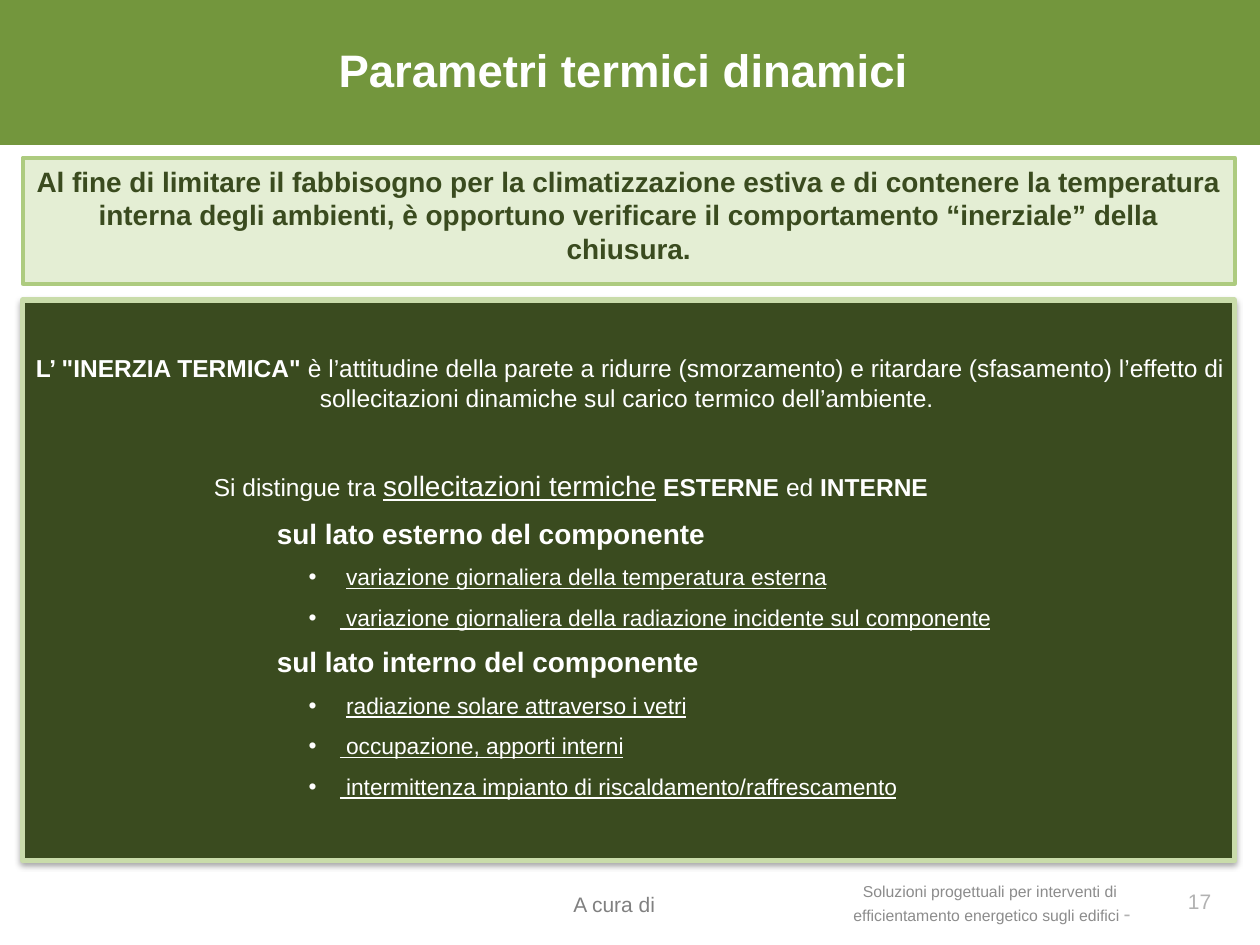
"""Build the slide on dynamic thermal parameters."""
import copy
from dataclasses import dataclass
from typing import Optional

import lxml.etree
import pptx
import pptx.dml.color
import pptx.enum.shapes
import pptx.enum.text
import pptx.oxml
import pptx.oxml.ns
import pptx.util

Cm = pptx.util.Cm
Pt = pptx.util.Pt
RGBColor = pptx.dml.color.RGBColor
Align = pptx.enum.text.PP_ALIGN
Anchor = pptx.enum.text.MSO_ANCHOR
qn = pptx.oxml.ns.qn

FONT = "Arial"
WHITE = RGBColor(0xFF, 0xFF, 0xFF)
BAND_GREEN = RGBColor(0x73, 0x96, 0x3D)
DARK_GREEN = RGBColor(0x3A, 0x4B, 0x1F)
PALE_GREEN = RGBColor(0xE4, 0xEE, 0xD4)
EDGE_GREEN = RGBColor(0xAD, 0xCB, 0x7F)
SOFT_GREEN = RGBColor(0xC9, 0xDC, 0xAA)
AUTHOR_GRAY = RGBColor(0x80, 0x80, 0x80)
COURSE_GRAY = RGBColor(0x8C, 0x8C, 0x8C)
NUMBER_GRAY = RGBColor(0xB2, 0xB2, 0xB2)

SHADOW = (
    '<a:effectLst xmlns:a="http://schemas.openxmlformats.org/drawingml/2006/main">'
    f'<a:outerShdw blurRad="{Pt(3.1)}" dist="{Pt(1.8)}" dir="5400000" rotWithShape="0">'
    '<a:srgbClr val="000000"><a:alpha val="35000"/></a:srgbClr>'
    "</a:outerShdw></a:effectLst>"
)


@dataclass
class Box:
    left: float
    top: float
    width: float
    height: float

    def lengths(self) -> tuple:
        return Cm(self.left), Cm(self.top), Cm(self.width), Cm(self.height)


@dataclass
class Span:
    text: str
    size: float
    color: RGBColor = WHITE
    bold: bool = False
    underline: bool = False


@dataclass
class Item:
    spans: list
    level: int = 0
    space_before: float = 0


def heading(text: str) -> Item:
    return Item([Span(text, 16, bold=True)], 1, 8)


def load(text: str) -> Item:
    return Item([Span(" ", 13), Span(text, 13, underline=True)], 2, 7.5)


def underlined_load(text: str) -> Item:
    return Item([Span(" " + text, 13, underline=True)], 2, 7.5)


STRESSES = [
    Item([
        Span("Si distingue tra ", 14),
        Span("sollecitazioni termiche", 16, underline=True),
        Span(" ", 14),
        Span("ESTERNE", 14, bold=True),
        Span(" ed ", 14),
        Span("INTERNE", 14, bold=True),
    ]),
    heading("sul lato esterno del componente"),
    load("variazione giornaliera della temperatura esterna"),
    underlined_load("variazione giornaliera della radiazione incidente sul componente"),
    heading("sul lato interno del componente"),
    load("radiazione solare attraverso i vetri"),
    underlined_load("occupazione, apporti interni"),
    underlined_load("intermittenza impianto di riscaldamento/raffrescamento"),
]


def write_spans(paragraph, spans: list, align) -> None:
    paragraph.alignment = align
    paragraph.space_before = Pt(0)
    for span in spans:
        run = paragraph.add_run()
        run.text = span.text
        run.font.name = FONT
        run.font.size = Pt(span.size)
        run.font.color.rgb = span.color
        run.font.bold = span.bold
        run.font.underline = span.underline


def set_frame(frame, anchor, insets: tuple = (0.25, 0.13, 0.25, 0.13)) -> None:
    frame.word_wrap = True
    frame.auto_size = pptx.enum.text.MSO_AUTO_SIZE.NONE
    frame.vertical_anchor = anchor
    (frame.margin_left, frame.margin_top,
     frame.margin_right, frame.margin_bottom) = map(Cm, insets)


def add_panel(slide, box: Box, fill: RGBColor, edge: Optional[RGBColor] = None,
              edge_width: float = 0):
    panel = slide.shapes.add_shape(
        pptx.enum.shapes.MSO_SHAPE.RECTANGLE, *box.lengths())
    panel.shadow.inherit = False
    panel.fill.solid()
    panel.fill.fore_color.rgb = fill
    if edge is None:
        panel.line.fill.background()
    else:
        panel.line.color.rgb = edge
        panel.line.width = Pt(edge_width)
    return panel


def add_text(slide, box: Box, spans: list, align, anchor=Anchor.MIDDLE, **frame_options):
    frame = slide.shapes.add_textbox(*box.lengths()).text_frame
    set_frame(frame, anchor, **frame_options)
    write_spans(frame.paragraphs[0], spans, align)
    return frame


def place(placeholder, box: Box) -> None:
    (placeholder.left, placeholder.top,
     placeholder.width, placeholder.height) = box.lengths()
    placeholder.element.getparent().append(placeholder.element)


def write_item(paragraph, item: Item) -> None:
    paragraph.level = item.level
    bulleted = item.level == 2
    properties = paragraph._p.get_or_add_pPr()
    properties.set("marL", str(Cm(1.27 * item.level)))
    properties.set("indent", str(Cm(-0.63) if bulleted else 0))
    if bulleted:
        lxml.etree.SubElement(properties, qn("a:buFont")).set("typeface", FONT)
        lxml.etree.SubElement(properties, qn("a:buChar")).set("char", "•")
    else:
        lxml.etree.SubElement(properties, qn("a:buNone"))
    write_spans(paragraph, item.spans, Align.JUSTIFY)
    paragraph.space_before = Pt(item.space_before)


def main() -> None:
    deck = pptx.Presentation()
    deck.slide_width, deck.slide_height = Cm(25.4), Cm(19.05)
    slide = deck.slides.add_slide(deck.slide_layouts[1])
    title, stresses = slide.placeholders[0], slide.placeholders[1]

    footer_insets = (0, 0.13, 0.25, 0)
    add_text(slide, Box(11.56, 17.65, 5.59, 1.02),
             [Span("A cura di", 12, AUTHOR_GRAY)], Align.LEFT, insets=footer_insets)
    add_panel(slide, Box(0, 0, 25.4, 2.92), BAND_GREEN)
    course = add_text(
        slide, Box(17.04, 17.65, 6.17, 1.02),
        [Span("Soluzioni progettuali per interventi di \vefficientamento energetico sugli edifici ",
              9, COURSE_GRAY)], Align.CENTER, insets=footer_insets).paragraphs[0]
    course.text = course.runs[0].text.replace("_x000B_", "\v")
    for run in course.runs:
        run.font.name = FONT
        run.font.size = Pt(9)
        run.font.color.rgb = COURSE_GRAY
    line_break = course._p.find(qn("a:br"))
    line_break.insert(0, copy.deepcopy(course.runs[0]._r.find(qn("a:rPr"))))
    write_spans(course, [Span("-", 12, NUMBER_GRAY)], Align.CENTER)

    panel = add_panel(slide, Box(0.46, 6.05, 24.43, 11.3), DARK_GREEN, SOFT_GREEN, 3)
    plain_effects = panel._element.spPr.find(qn("a:effectLst"))
    plain_effects.getparent().replace(plain_effects, pptx.oxml.parse_xml(SHADOW))

    place(title, Box(1.14, 0.84, 22.86, 1.12))
    set_frame(title.text_frame, Anchor.MIDDLE, (0.25, 0, 0.25, 0))
    write_spans(title.text_frame.paragraphs[0],
                [Span("Parametri termici dinamici", 26, bold=True)], Align.CENTER)
    add_text(slide, Box(23.22, 17.65, 1.45, 1.02),
             [Span("17", 12, NUMBER_GRAY)], Align.RIGHT)
    add_text(slide, Box(0.43, 6.99, 24.56, 1.45), [
        Span("L’ \"INERZIA TERMICA\"", 14, bold=True),
        Span(" è l’attitudine della parete a ridurre (smorzamento) e ritardare (sfasamento) "
             "l’effetto di sollecitazioni dinamiche sul carico termico dell’ambiente. ", 14),
    ], Align.CENTER, Anchor.TOP)

    purpose = add_panel(slide, Box(0.46, 3.18, 24.43, 2.54), PALE_GREEN, EDGE_GREEN, 2.25)
    set_frame(purpose.text_frame, Anchor.TOP)
    write_spans(purpose.text_frame.paragraphs[0], [Span(
        "Al fine di limitare il fabbisogno per la climatizzazione estiva e di contenere la "
        "temperatura interna degli ambienti, è opportuno verificare il comportamento "
        "“inerziale” della chiusura.", 16, DARK_GREEN, bold=True)], Align.CENTER)

    place(stresses, Box(4.06, 9.32, 17.48, 7.21))
    frame = stresses.text_frame
    set_frame(frame, Anchor.TOP)
    for index, item in enumerate(STRESSES):
        write_item(frame.add_paragraph() if index else frame.paragraphs[0], item)

    deck.save("out.pptx")


if __name__ == "__main__":
    main()
